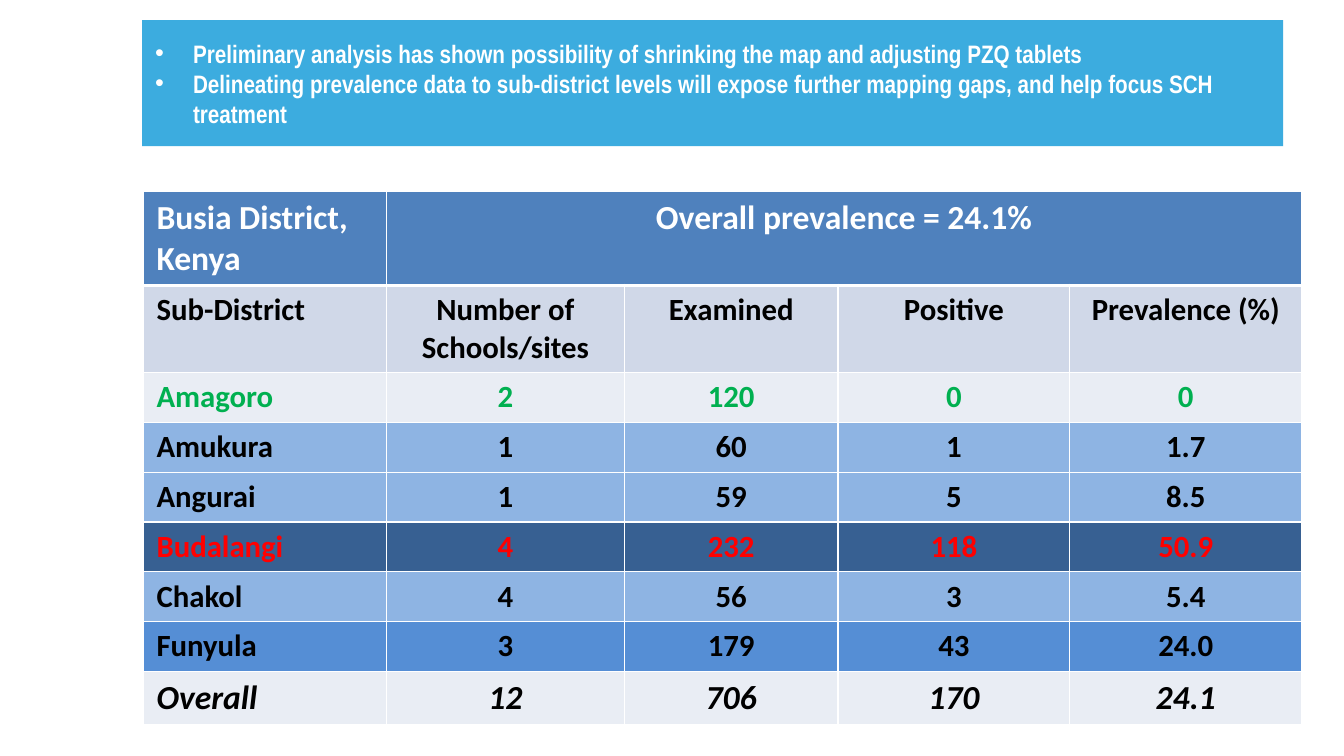
from lxml import etree
from pptx import Presentation
from pptx.dml.color import RGBColor
from pptx.enum.shapes import MSO_SHAPE
from pptx.enum.text import MSO_ANCHOR, PP_ALIGN
from pptx.oxml.ns import qn
from pptx.util import Pt

RECTANGLE = MSO_SHAPE.RECTANGLE
MIDDLE = MSO_ANCHOR.MIDDLE
LEFT, CENTER = PP_ALIGN.LEFT, PP_ALIGN.CENTER

WHITE = RGBColor(0xFF, 0xFF, 0xFF)
BLACK = RGBColor(0x00, 0x00, 0x00)
GREEN = RGBColor(0x00, 0xB0, 0x50)
RED = RGBColor(0xFF, 0x00, 0x00)
BANNER_BLUE = RGBColor(0x3C, 0xAC, 0xDF)
HEADER_BLUE = RGBColor(0x4F, 0x81, 0xBD)
HEADING_GREY = RGBColor(0xD0, 0xD8, 0xE8)
PALE_GREY = RGBColor(0xE9, 0xED, 0xF4)
LOW_BLUE = RGBColor(0x8E, 0xB4, 0xE3)
MEDIUM_BLUE = RGBColor(0x55, 0x8E, 0xD5)
HIGH_BLUE = RGBColor(0x37, 0x60, 0x92)

MARGINS = {"margin_left": Pt(9.36), "margin_right": Pt(9.36),
           "margin_top": Pt(4.32), "margin_bottom": Pt(4.32)}
BULLET_INDENT = Pt(27)

FINDINGS = [
    "Preliminary analysis has shown possibility of shrinking the map and adjusting PZQ tablets",
    "Delineating prevalence data to sub-district levels will expose further mapping gaps, "
    "and help focus SCH treatment",
]

COLUMN_WIDTHS = [173.5, 170, 152.6, 165.6, 165.6]
# Each row: height, fill, text colour, text size, italic, cell texts
ROWS = [
    (65.5, HEADER_BLUE, WHITE, 24, False, ["Busia District, Kenya", "Overall prevalence = 24.1%"]),
    (61.2, HEADING_GREY, BLACK, 22, False,
     ["Sub-District", "Number of Schools/sites", "Examined", "Positive", "Prevalence (%)"]),
    (35.6, PALE_GREY, GREEN, 22, False, ["Amagoro", "2", "120", "0", "0"]),
    (35.6, LOW_BLUE, BLACK, 22, False, ["Amukura", "1", "60", "1", "1.7"]),
    (35.6, LOW_BLUE, BLACK, 22, False, ["Angurai", "1", "59", "5", "8.5"]),
    (35.6, HIGH_BLUE, RED, 22, False, ["Budalangi", "4", "232", "118", "50.9"]),
    (35.6, LOW_BLUE, BLACK, 22, False, ["Chakol", "4", "56", "3", "5.4"]),
    (35.6, MEDIUM_BLUE, BLACK, 22, False, ["Funyula", "3", "179", "43", "24.0"]),
    (37.4, PALE_GREY, BLACK, 24, True, ["Overall", "12", "706", "170", "24.1"]),
]


def apply_format(target, values):
    for name, value in values.items():
        setattr(target, name, value)


def style_font(font, color, **values):
    apply_format(font, values)
    font.color.rgb = color


def add_bullet(paragraph):
    properties = paragraph._p.get_or_add_pPr()
    properties.set("marL", str(BULLET_INDENT))
    properties.set("indent", str(-BULLET_INDENT))
    etree.SubElement(properties, qn("a:buFont")).set("typeface", "Arial")
    etree.SubElement(properties, qn("a:buChar")).set("char", "•")


def add_borders(cell, top, bottom):
    properties = cell._tc.get_or_add_tcPr()
    for tag, width in {"lnL": 1, "lnR": 1, "lnT": top, "lnB": bottom}.items():
        line = etree.SubElement(properties, qn(f"a:{tag}"), w=str(Pt(width)))
        fill = etree.SubElement(line, qn("a:solidFill"))
        etree.SubElement(fill, qn("a:srgbClr"), val=str(WHITE))


def add_findings_banner(slide, left, top, width, height):
    shape = slide.shapes.add_shape(RECTANGLE, Pt(left), Pt(top), Pt(width), Pt(height))
    shape.shadow.inherit = False
    shape.fill.solid()
    shape.fill.fore_color.rgb = BANNER_BLUE
    shape.line.fill.background()

    frame = shape.text_frame
    apply_format(frame, {**MARGINS, "word_wrap": True, "vertical_anchor": MIDDLE})
    for index, finding in enumerate(FINDINGS):
        paragraph = frame.add_paragraph() if index else frame.paragraphs[0]
        paragraph.text = finding
        paragraph.alignment = LEFT
        add_bullet(paragraph)
        style_font(paragraph.font, WHITE, name="Arial Narrow", size=Pt(18), bold=True)


def add_prevalence_table(slide, left, top):
    width = sum(COLUMN_WIDTHS)
    height = sum(row[0] for row in ROWS)
    table = slide.shapes.add_table(len(ROWS), len(COLUMN_WIDTHS),
                                   Pt(left), Pt(top), Pt(width), Pt(height)).table
    for column, column_width in zip(table.columns, COLUMN_WIDTHS):
        column.width = Pt(column_width)

    for row_index, (row_height, fill, color, size, italic, texts) in enumerate(ROWS):
        table.rows[row_index].height = Pt(row_height)
        # A thick rule separates the title row from the rest
        top_rule = 3 if row_index == 1 else 1
        bottom_rule = 3 if row_index == 0 else 1
        for column_index in range(len(COLUMN_WIDTHS)):
            cell = table.cell(row_index, column_index)
            apply_format(cell, MARGINS)
            add_borders(cell, top_rule, bottom_rule)
            cell.fill.solid()
            cell.fill.fore_color.rgb = fill
            if column_index < len(texts):
                paragraph = cell.text_frame.paragraphs[0]
                paragraph.text = texts[column_index]
                paragraph.alignment = CENTER if column_index else LEFT
                style_font(paragraph.runs[0].font, color, name="Calibri",
                           size=Pt(size), bold=True, italic=italic)

    # The overall prevalence spans all the figure columns
    table.cell(0, 1).merge(table.cell(0, len(COLUMN_WIDTHS) - 1))


def main():
    presentation = Presentation()
    presentation.slide_width = Pt(960)
    presentation.slide_height = Pt(540)
    slide = presentation.slides.add_slide(presentation.slide_layouts[6])
    add_prevalence_table(slide, 102.5, 136.8)
    add_findings_banner(slide, 101.5, 14.4, 815, 90)
    presentation.save("out.pptx")


if __name__ == "__main__":
    main()
